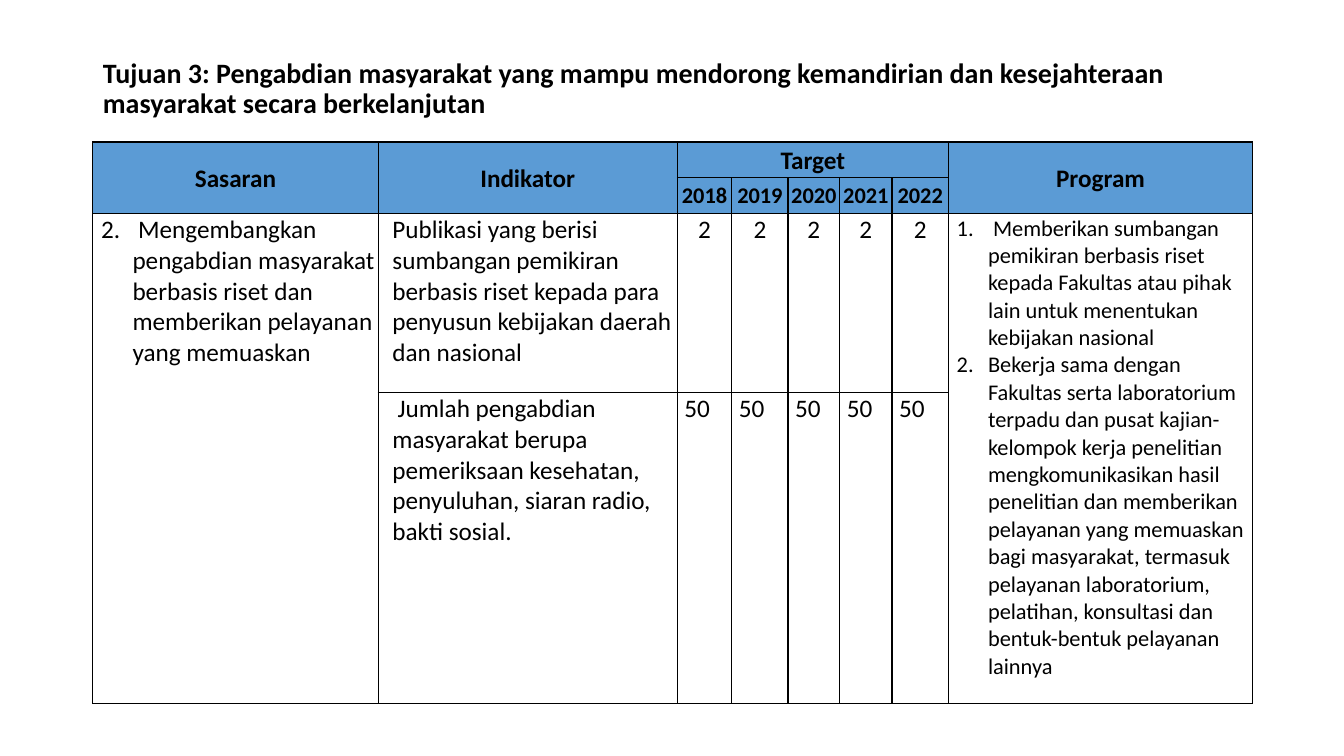
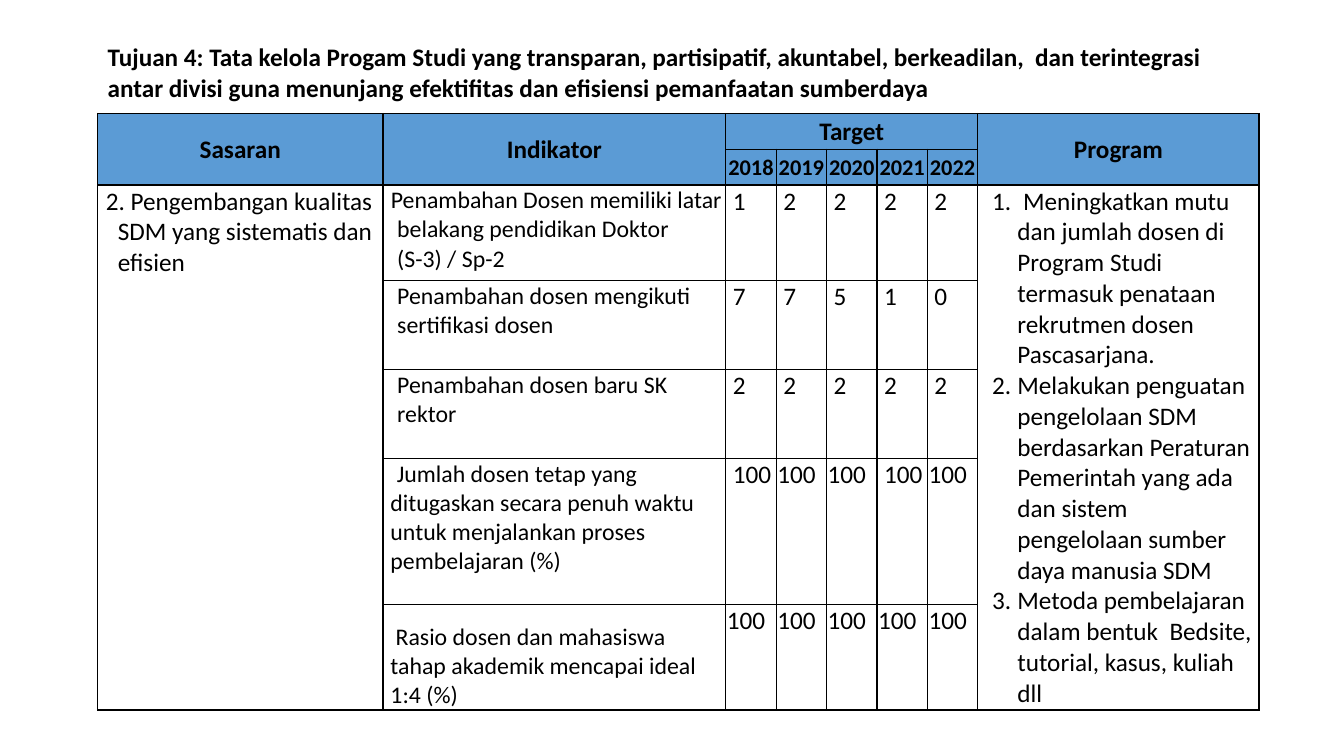
from pptx import Presentation
from pptx.util import Cm, Pt
from pptx.dml.color import RGBColor
from pptx.enum.text import PP_ALIGN as Align, MSO_ANCHOR as Anchor, MSO_AUTO_SIZE as Auto
from pptx.oxml.ns import qn
from lxml.etree import SubElement as Sub

FONT, BLACK, BLUE = "Calibri", "000000", "5B9BD5"
YEARS = ["2018", "2019", "2020", "2021", "2022"]
HEADS = [(0, "Sasaran"), (1, "Indikator"), (7, "Program")]
PAD = 0.15

PAGES = [
    {
        "title": "Tujuan 3: Pengabdian masyarakat yang mampu mendorong kemandirian "
                 "dan kesejahteraan masyarakat secara berkelanjutan",
        "box": (2.34, 1.35, 28.52, 1.8), "size": 20, "lead": 0.9,
        "at": (2.34, 3.58),
        "cols": [7.19, 7.54, 1.37, 1.42, 1.3, 1.32, 1.42, 7.67],
        "rows": [0.9, 0.9, 4.51, 7.84],
        "goal": " Mengembangkan pengabdian masyarakat berbasis riset dan "
                "memberikan pelayanan yang memuaskan",
        "goal_in": (0.97, -0.79),
        "plans": [
            " Memberikan sumbangan pemikiran berbasis riset kepada Fakultas atau "
            "pihak lain untuk menentukan kebijakan nasional",
            "Bekerja sama dengan Fakultas serta laboratorium terpadu dan pusat "
            "kajian- kelompok kerja penelitian mengkomunikasikan hasil penelitian "
            "dan memberikan pelayanan yang memuaskan bagi masyarakat, termasuk "
            "pelayanan laboratorium, pelatihan, konsultasi dan bentuk-bentuk "
            "pelayanan lainnya",
        ],
        "plan_in": (0.97, -0.79), "plan_size": 16, "aim_size": 18,
        "aims": [
            {"text": "Publikasi yang berisi sumbangan pemikiran berbasis riset "
                     "kepada para penyusun kebijakan daerah dan nasional",
             "dent": (0.33, 0), "vals": [2] * 5, "align": Align.CENTER},
            {"text": "Jumlah pengabdian masyarakat berupa pemeriksaan kesehatan, "
                     "penyuluhan, siaran radio, bakti sosial.",
             "dent": (0.33, 0.13), "vals": [50] * 5, "pads": [PAD] * 5},
        ],
    },
    {
        "title": "Tujuan 4: Tata kelola Progam Studi yang transparan, partisipatif, "
                 "akuntabel, berkeadilan,  dan terintegrasi antar divisi guna "
                 "menunjang efektifitas dan efisiensi pemanfaatan sumberdaya",
        "box": (2.46, 0.91, 28.35, 1.8), "size": 18, "lead": 1,
        "at": (2.46, 2.86),
        "cols": [7.19, 8.64] + [1.27] * 5 + [7.09],
        "rows": [0.9, 0.9, 2.41, 2.24, 2.24, 3.68, 2.66],
        "goal": " Pengembangan kualitas SDM yang sistematis dan efisien",
        "goal_in": (0.48, -0.3),
        "plans": [
            " Meningkatkan mutu dan jumlah dosen di Program Studi termasuk "
            "penataan rekrutmen dosen Pascasarjana.",
            "Melakukan penguatan pengelolaan SDM berdasarkan Peraturan Pemerintah "
            "yang ada dan sistem pengelolaan sumber daya manusia SDM",
            "Metoda pembelajaran dalam bentuk  Bedsite, tutorial, kasus, kuliah dll",
        ],
        "plan_in": (0.97, -0.64), "plan_size": 18, "aim_size": 17,
        "aims": [
            {"text": "Penambahan Dosen memiliki latar belakang pendidikan Doktor "
                     "(S-3) / Sp-2",
             "dent": (0.33, -0.16), "vals": [1, 2, 2, 2, 2], "pads": [PAD] * 5},
            {"text": "Penambahan dosen mengikuti sertifikasi dosen",
             "dent": (0.33, 0), "vals": [7, 7, 5, 1, 0], "pads": [PAD] * 5},
            {"text": "Penambahan dosen baru SK rektor",
             "dent": (0.33, 0), "vals": [2] * 5, "pads": [PAD] * 5},
            {"text": "Jumlah dosen tetap yang ditugaskan secara penuh waktu untuk "
                     "menjalankan proses pembelajaran (%)",
             "dent": (0.16, 0.16), "vals": [100] * 5, "pads": [PAD, 0, 0, PAD, 0]},
            {"text": "Rasio dosen dan mahasiswa tahap akademik mencapai ideal 1:4 (%)",
             "dent": (0.16, 0.13), "vals": [100] * 5, "anchor": Anchor.BOTTOM},
        ],
    },
]


def color(code):
    return RGBColor.from_string(code)


def write(frame, text, size=18, bold=False, align=Align.LEFT, dent=(0, 0),
          start=None, lead=None):
    lines = text if isinstance(text, list) else [text]
    for i, line in enumerate(lines):
        par = frame.add_paragraph() if i else frame.paragraphs[0]
        prop = par._p.get_or_add_pPr()
        prop.set("marL", str(Cm(dent[0])))
        prop.set("indent", str(Cm(dent[1])))
        if start:
            num = Sub(prop, qn("a:buAutoNum"), type="arabicPeriod")
            if start > 1:
                num.set("startAt", str(start))
        par.alignment = align
        if lead:
            par.line_spacing = lead
        run = par.add_run()
        run.text = line
        font = run.font
        font.name, font.size, font.bold = FONT, Pt(size), bold
        font.color.rgb = color(BLACK)


def frame_cell(cell):
    prop = cell._tc.get_or_add_tcPr()
    for side in ("lnL", "lnR", "lnT", "lnB"):
        line = Sub(prop, qn("a:" + side), w=str(Pt(1)))
        fill = Sub(line, qn("a:solidFill"))
        Sub(fill, qn("a:srgbClr"), val=BLACK)
    cell.fill.background()
    cell.margin_left = cell.margin_right = cell.margin_top = Cm(0.03)
    cell.margin_bottom = 0


def head(cell, text, size=18):
    cell.fill.solid()
    cell.fill.fore_color.rgb = color(BLUE)
    cell.vertical_anchor = Anchor.MIDDLE
    write(cell.text_frame, text, size=size, bold=True, align=Align.CENTER)


def add_title(slide, page):
    title = slide.shapes.title
    title.left, title.top, title.width, title.height = map(Cm, page["box"])
    frame = title.text_frame
    frame.word_wrap = True
    frame.auto_size = Auto.NONE
    frame.vertical_anchor = Anchor.MIDDLE
    write(frame, page["title"], size=page["size"], bold=True, lead=page["lead"])


def add_grid(slide, page):
    cols, rows = page["cols"], page["rows"]
    size = (*page["at"], sum(cols), sum(rows))
    grid = slide.shapes.add_table(len(rows), len(cols), *map(Cm, size)).table
    grid.first_row = grid.horz_banding = False
    for col, wide in zip(grid.columns, cols):
        col.width = Cm(wide)
    for row, high in zip(grid.rows, rows):
        row.height = Cm(high)
    for cell in grid.iter_cells():
        frame_cell(cell)

    last = len(rows) - 1
    for col, text in HEADS:
        grid.cell(0, col).merge(grid.cell(1, col))
        head(grid.cell(0, col), text)
    grid.cell(0, 2).merge(grid.cell(0, 6))
    head(grid.cell(0, 2), "Target")
    for col, year in enumerate(YEARS, 2):
        head(grid.cell(1, col), year, size=16)

    for col in (0, 7):
        grid.cell(2, col).merge(grid.cell(last, col))
    write(grid.cell(2, 0).text_frame, page["goal"], dent=page["goal_in"], start=2)
    write(grid.cell(2, 7).text_frame, page["plans"], size=page["plan_size"],
          dent=page["plan_in"], start=1)

    for row, aim in enumerate(page["aims"], 2):
        cell = grid.cell(row, 1)
        cell.vertical_anchor = aim.get("anchor", Anchor.TOP)
        write(cell.text_frame, aim["text"], size=page["aim_size"], dent=aim["dent"])
        pads = aim.get("pads", [0] * 5)
        for col, (val, pad) in enumerate(zip(aim["vals"], pads), 2):
            write(grid.cell(row, col).text_frame, str(val), dent=(pad, 0),
                  align=aim.get("align", Align.LEFT))


def main():
    deck = Presentation()
    deck.slide_width, deck.slide_height = Cm(33.87), Cm(19.05)
    for page in PAGES:
        slide = deck.slides.add_slide(deck.slide_layouts[5])
        add_grid(slide, page)
        add_title(slide, page)
    deck.save("out.pptx")


if __name__ == "__main__":
    main()
